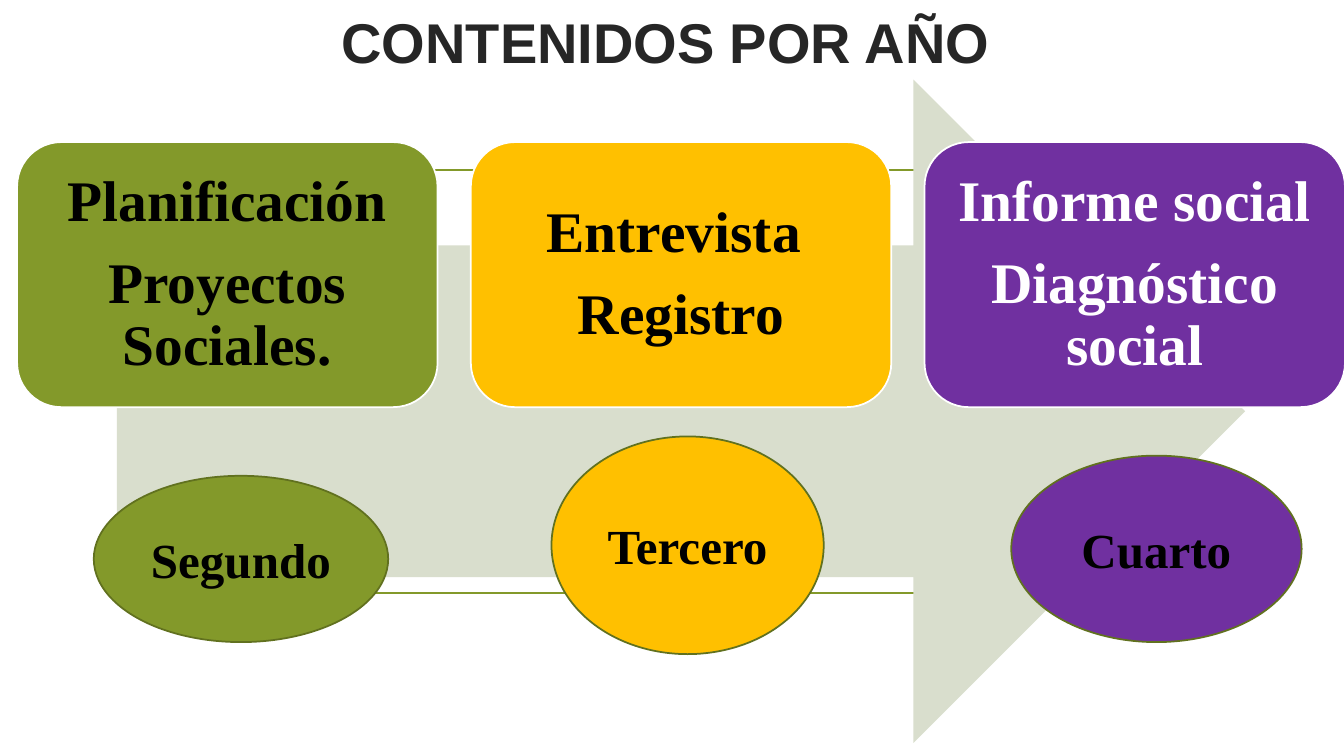
from pptx import Presentation
from pptx.dml.color import RGBColor
from pptx.enum.shapes import MSO_SHAPE
from pptx.enum.text import MSO_ANCHOR, PP_ALIGN
from pptx.util import Inches, Pt

CENTER = PP_ALIGN.CENTER
MIDDLE, BOTTOM = MSO_ANCHOR.MIDDLE, MSO_ANCHOR.BOTTOM
RECTANGLE, ROUNDED = MSO_SHAPE.RECTANGLE, MSO_SHAPE.ROUNDED_RECTANGLE
ARROW, OVAL = MSO_SHAPE.RIGHT_ARROW, MSO_SHAPE.OVAL

COLORS = {
    "green": "83992A", "dark_green": "61711F", "pale_green": "D9DECD",
    "yellow": "FFC000", "purple": "7030A0",
    "black": "000000", "white": "FFFFFF", "heading": "262626",
}

# topics, topic text colour, fill, year, oval left / top / width / height
YEARS = [
    (["Planificación", "Proyectos Sociales."], "black", "green",
     "Segundo", (0.93, 4.72, 2.92, 1.65)),
    (["Entrevista ", "Registro"], "black", "yellow",
     "Tercero", (5.47, 4.33, 2.7, 2.16)),
    (["Informe social", "Diagnóstico social"], "white", "purple",
     "Cuarto", (10.03, 4.52, 2.88, 1.85)),
]
CARD_LEFT, CARD_TOP, CARD_STEP = 0.17, 1.41, 4.5
CARD_WIDTH, CARD_HEIGHT = 4.17, 2.63


def rgb(name):
    return RGBColor.from_string(COLORS[name])


def write(frame, paragraphs, *, size, color, font="Times New Roman",
          anchor=MIDDLE, inset=None, line_spacing=None, space_after=None):
    """Fill a text frame with bold, centred paragraphs."""
    frame.word_wrap = True
    frame.vertical_anchor = anchor
    if inset is not None:
        frame.margin_left = frame.margin_right = Inches(inset)
        frame.margin_top = frame.margin_bottom = Inches(inset)
    for index, text in enumerate(paragraphs):
        paragraph = frame.add_paragraph() if index else frame.paragraphs[0]
        paragraph.alignment = CENTER
        if line_spacing is not None:
            paragraph.line_spacing = line_spacing
        if space_after is not None:
            paragraph.space_after = Pt(space_after)
        run = paragraph.add_run()
        run.text = text
        run.font.name = font
        run.font.size = Pt(size)
        run.font.bold = True
        run.font.color.rgb = rgb(color)


class YearSlide:
    line_width = Pt(1.25)

    def __init__(self, slide):
        self.slide = slide

    def shape(self, kind, box, fill=None, line=None):
        shape = self.slide.shapes.add_shape(kind, *map(Inches, box))
        shape.shadow.inherit = False
        if fill:
            shape.fill.solid()
            shape.fill.fore_color.rgb = rgb(fill)
        else:
            shape.fill.background()
        if line:
            shape.line.color.rgb = rgb(line)
            shape.line.width = self.line_width
        else:
            shape.line.fill.background()
        return shape

    def heading(self, text, box):
        heading = self.slide.shapes.add_textbox(*map(Inches, box))
        write(heading.text_frame, [text], size=40, color="heading",
              font="Arial", anchor=BOTTOM)

    def topic_card(self, topics, box, fill, color):
        card = self.shape(ROUNDED, box, fill, "white")
        write(card.text_frame, topics, size=41, color=color, inset=0.17,
              line_spacing=0.9, space_after=14.35)

    def year_oval(self, year, box, fill):
        oval = self.shape(OVAL, box, fill, "dark_green")
        write(oval.text_frame, [year], size=35, color="black")


def main():
    presentation = Presentation()
    presentation.slide_width = Inches(13.33)
    presentation.slide_height = Inches(7.5)
    page = YearSlide(presentation.slides.add_slide(presentation.slide_layouts[6]))

    page.shape(RECTANGLE, (2.55, 1.69, 8.25, 4.19), line="green")
    page.heading("CONTENIDOS POR AÑO", (0, 0, 13.2, 0.79))
    page.shape(ARROW, (1.16, 0.79, 11.19, 6.58), fill="pale_green")

    for column, (topics, color, fill, year, oval_box) in enumerate(YEARS):
        card_box = (CARD_LEFT + column * CARD_STEP, CARD_TOP,
                    CARD_WIDTH, CARD_HEIGHT)
        page.topic_card(topics, card_box, fill, color)
        page.year_oval(year, oval_box, fill)

    presentation.save("out.pptx")


if __name__ == "__main__":
    main()
